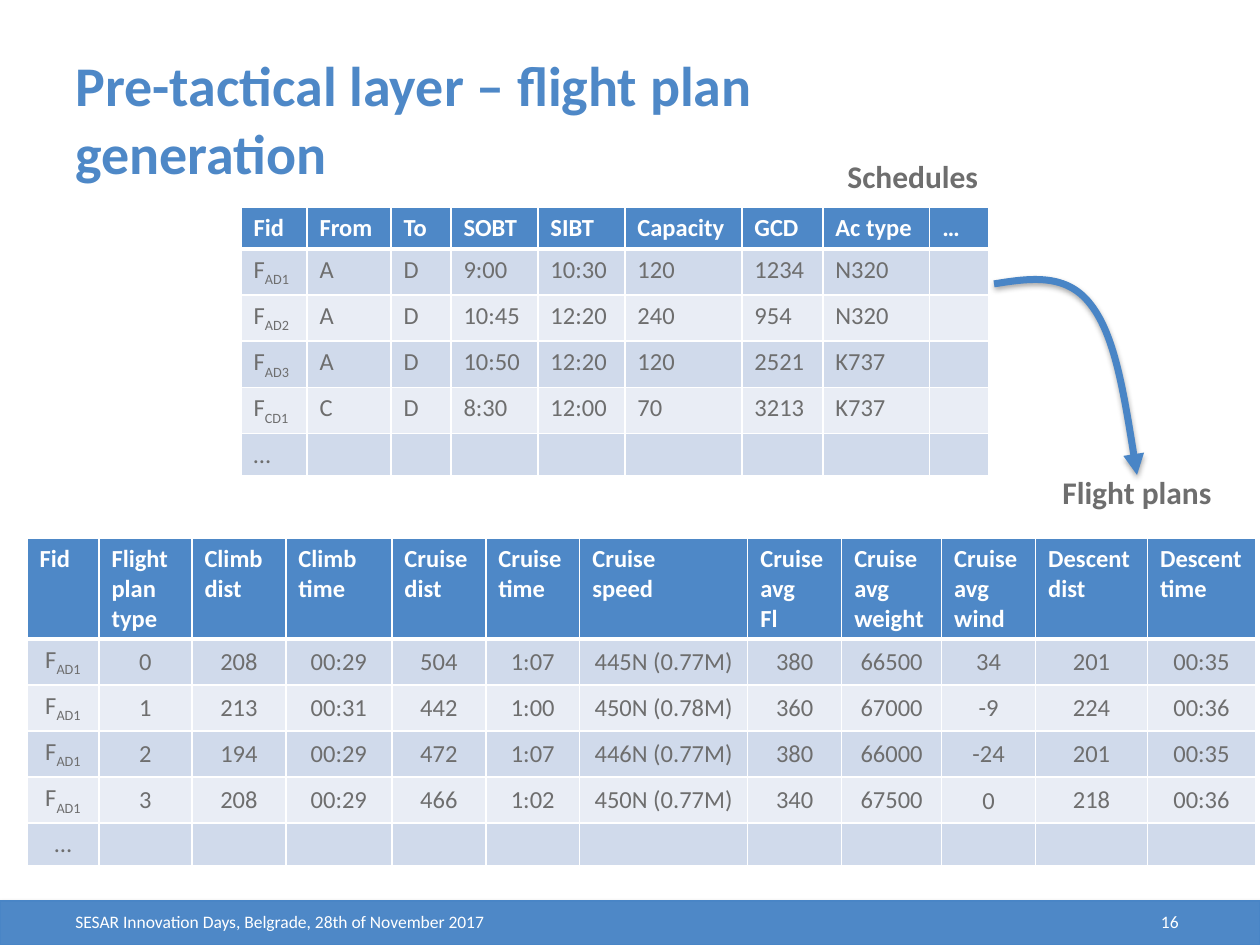
from lxml import etree
from pptx import Presentation
from pptx.dml.color import RGBColor
from pptx.enum.shapes import MSO_SHAPE
from pptx.enum.text import MSO_ANCHOR, PP_ALIGN
from pptx.oxml.ns import qn
from pptx.util import Emu, Pt

RECTANGLE = MSO_SHAPE.RECTANGLE
TOP, MIDDLE = MSO_ANCHOR.TOP, MSO_ANCHOR.MIDDLE
LEFT, CENTER, RIGHT = PP_ALIGN.LEFT, PP_ALIGN.CENTER, PP_ALIGN.RIGHT

EMU_PER_PX = 914400 / 126
PAGE_WIDTH, PAGE_HEIGHT = 1260, 945
FONT = "Calibri"
BLUE, LINE_BLUE, GREY, WHITE = "4E88C7", "4985C6", "6E6E6E", "FFFFFF"
BANDS = ("D0DAEB", "E9EDF5")

SCHEDULES = [
    ["Fid", "From", "To", "SOBT", "SIBT", "Capacity", "GCD", "Ac type", "…"],
    ["F_AD1", "A", "D", "9:00", "10:30", "120", "1234", "N320", ""],
    ["F_AD2", "A", "D", "10:45", "12:20", "240", "954", "N320", ""],
    ["F_AD3", "A", "D", "10:50", "12:20", "120", "2521", "K737", ""],
    ["F_CD1", "C", "D", "8:30", "12:00", "70", "3213", "K737", ""],
    ["…"] + [""] * 8,
]
SCHEDULE_COLUMNS = [66, 84, 60, 87, 87, 117, 81, 107, 59]

FLIGHT_PLANS = [
    ["Fid", "Flight\nplan\ntype", "Climb\ndist", "Climb\ntime", "Cruise\ndist",
     "Cruise\ntime", "Cruise\nspeed", "Cruise\navg\nFl", "Cruise\navg\nweight",
     "Cruise\navg\nwind", "Descent\ndist", "Descent\ntime"],
    ["F_AD1", "0", "208", "00:29", "504", "1:07", "445N (0.77M)", "380",
     "66500", "34", "201", "00:35"],
    ["F_AD1", "1", "213", "00:31", "442", "1:00", "450N (0.78M)", "360",
     "67000", "-9", "224", "00:36"],
    ["F_AD1", "2", "194", "00:29", "472", "1:07", "446N (0.77M)", "380",
     "66000", "-24", "201", "00:35"],
    ["F_AD1", "3", "208", "00:29", "466", "1:02", "450N (0.77M)", "340",
     "67500", "0", "218", "00:36"],
    ["…"] + [""] * 11,
]
FLIGHT_PLAN_COLUMNS = [72, 93, 94, 106, 94, 94, 168, 94, 100, 94, 112, 108]


def px(length):
    return Emu(round(length * EMU_PER_PX))


def color(value):
    return RGBColor.from_string(value)


class SlideBuilder:
    def __init__(self, slide):
        self.slide = slide

    def style(self, para, size, text_color, bold=False, align=LEFT):
        para.alignment = align
        font = para.font
        font.name, font.size, font.bold = FONT, Pt(size), bold
        font.color.rgb = color(text_color)

    def shadow(self, shape):
        shape.shadow.inherit = False
        effects = shape._element.spPr.find(qn("a:effectLst"))
        outer = etree.SubElement(effects, qn("a:outerShdw"), blurRad="40000",
                                 dist="23000", dir="5400000", rotWithShape="0")
        black = etree.SubElement(outer, qn("a:srgbClr"), val="000000")
        etree.SubElement(black, qn("a:alpha"), val="35000")

    def bar(self, left, top, width, height):
        shape = self.slide.shapes.add_shape(
            RECTANGLE, px(left), px(top), px(width), px(height))
        shape.fill.solid()
        shape.fill.fore_color.rgb = color(BLUE)
        shape.line.color.rgb = color(LINE_BLUE)
        shape.line.width = Pt(0.75)
        self.shadow(shape)

    def text(self, left, top, width, height, words, size, text_color,
             bold=False, align=LEFT, anchor=TOP, wrap=True):
        box = self.slide.shapes.add_textbox(px(left), px(top), px(width), px(height))
        frame = box.text_frame
        frame.word_wrap, frame.vertical_anchor = wrap, anchor
        frame.text = words
        self.style(frame.paragraphs[0], size, text_color, bold, align)

    def curved_arrow(self, start, *curves):
        points = [(px(x), px(y)) for curve in curves for x, y in curve]
        builder = self.slide.shapes.build_freeform(px(start[0]), px(start[1]))
        builder.add_line_segments(points, close=False)
        shape = builder.convert_to_shape()
        # Every three line points become one cubic curve
        lines = list(shape._element.iter(qn("a:lnTo")))
        for first in range(0, len(lines), 3):
            group = lines[first:first + 3]
            curve = etree.Element(qn("a:cubicBezTo"))
            group[0].addprevious(curve)
            for line in group:
                curve.append(line[0])
                line.getparent().remove(line)
        shape.fill.background()
        shape.line.color.rgb = color(LINE_BLUE)
        shape.line.width = Pt(4)
        etree.SubElement(shape.line._get_or_add_ln(), qn("a:tailEnd"), type="triangle")
        self.shadow(shape)

    def borders(self, cell, top, bottom):
        properties = cell._tc.get_or_add_tcPr()
        for side, width in (("L", 1), ("R", 1), ("T", top), ("B", bottom)):
            line = etree.SubElement(properties, qn(f"a:ln{side}"), w=str(Pt(width)))
            fill = etree.SubElement(line, qn("a:solidFill"))
            etree.SubElement(fill, qn("a:srgbClr"), val=WHITE)

    def cell(self, cell, words, row, align, anchor):
        header = row == 0
        self.borders(cell, 3 if row == 1 else 1, 3 if header else 1)
        cell.fill.solid()
        cell.fill.fore_color.rgb = color(BLUE if header else BANDS[(row - 1) % 2])
        cell.vertical_anchor = TOP if header else anchor
        base, _, subscript = words.partition("_")
        cell.text_frame.text = base
        for para in cell.text_frame.paragraphs:
            if subscript:
                span = para.add_run()
                span.text = subscript
                span._r.get_or_add_rPr().set("baseline", "-25000")
            if not words:
                etree.SubElement(para._p, qn("a:endParaRPr"), sz="1400")
            self.style(para, 14, WHITE if header else GREY, header,
                       LEFT if header else align)

    def table(self, left, top, columns, heights, rows, align=LEFT, anchor=TOP,
              tight_column=None):
        table = self.slide.shapes.add_table(
            len(rows), len(columns), px(left), px(top),
            px(sum(columns)), px(sum(heights))).table
        for column, width in zip(table.columns, columns):
            column.width = px(width)
        for row, height in zip(table.rows, heights):
            row.height = px(height)
        for r, row in enumerate(rows):
            for c, words in enumerate(row):
                cell = table.cell(r, c)
                if c == tight_column and r and words:
                    cell.margin_left = cell.margin_right = cell.margin_top = px(1)
                    cell.margin_bottom = 0
                self.cell(cell, words, r, align, anchor)


def main():
    deck = Presentation()
    deck.slide_width, deck.slide_height = px(PAGE_WIDTH), px(PAGE_HEIGHT)
    page = SlideBuilder(deck.slides.add_slide(deck.slide_layouts[6]))

    # Footer bar, title and footer text
    page.bar(0, 901, PAGE_WIDTH, 44)
    page.text(63, 39, 917, 158, "Pre-tactical layer – flight plan generation",
              32, BLUE, bold=True, anchor=MIDDLE)
    page.text(63, 904, 537, 35, "SESAR Innovation Days, Belgrade, 28th of November 2017",
              10, WHITE, anchor=MIDDLE)
    page.text(897, 904, 294, 35, "16", 10, WHITE, align=RIGHT, anchor=MIDDLE)

    # Schedules and the flight plans generated from them
    body_heights = [46] * 4 + [42]
    page.table(241, 207, SCHEDULE_COLUMNS, [41] + body_heights, SCHEDULES)
    page.text(1050, 467, 186, 50, "Flight plans", 18, GREY, bold=True)
    page.table(27, 538, FLIGHT_PLAN_COLUMNS, [100] + body_heights, FLIGHT_PLANS,
               align=CENTER, anchor=MIDDLE, tight_column=9)

    # Arrow from schedules to flight plans
    page.curved_arrow((994, 284),
                      [(1031, 278), (1067, 273), (1091, 305)],
                      [(1115, 336), (1126, 406), (1137, 475)])
    page.text(835, 151, 158, 50, "Schedules", 18, GREY, bold=True, wrap=False)

    deck.save("out.pptx")


if __name__ == "__main__":
    main()
